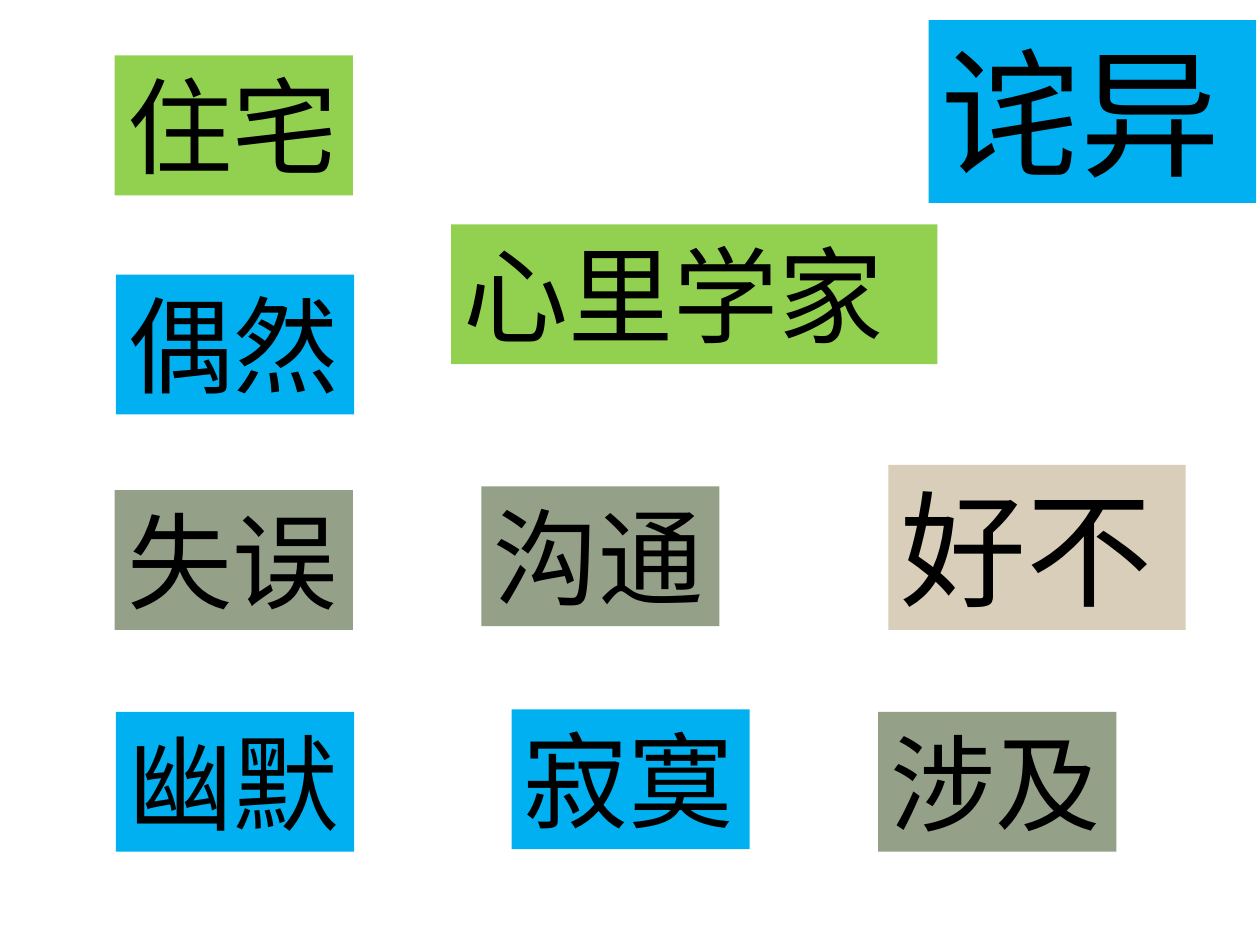
from dataclasses import dataclass
from pptx import Presentation
from pptx.dml.color import RGBColor
from pptx.enum.text import MSO_AUTO_SIZE
from pptx.slide import Slide
from pptx.util import Inches, Pt

BLACK = RGBColor(0x00, 0x00, 0x00)
GREEN = RGBColor(0x92, 0xD0, 0x50)
BLUE = RGBColor(0x00, 0xB0, 0xF0)
SAGE = RGBColor(0x94, 0xA0, 0x88)
SAND = RGBColor(0xD8, 0xCE, 0xBA)


@dataclass
class WordBoard:
    slide: Slide
    font_name: str = "Calibri"
    ink: RGBColor = BLACK

    def add_word(self, word, left, top, color, width=1.89, height=1.11, size=60):
        card = self.slide.shapes.add_textbox(
            Inches(left), Inches(top), Inches(width), Inches(height)
        )
        card.fill.solid()
        card.fill.fore_color.rgb = color
        frame = card.text_frame
        frame.word_wrap = True
        frame.auto_size = MSO_AUTO_SIZE.SHAPE_TO_FIT_TEXT
        run = frame.paragraphs[0].add_run()
        run.text = word
        run.font.name = self.font_name
        run.font.size = Pt(size)
        run.font.color.rgb = self.ink


def main():
    presentation = Presentation()
    presentation.slide_width = Inches(10)
    presentation.slide_height = Inches(7.5)
    board = WordBoard(presentation.slides.add_slide(presentation.slide_layouts[6]))

    board.add_word("住宅", 0.91, 0.44, GREEN)
    board.add_word("失误", 0.91, 3.89, SAGE)
    board.add_word("心里学家", 3.58, 1.78, GREEN, width=3.86)
    board.add_word("诧异", 7.37, 0.16, BLUE, width=2.6, height=1.45, size=80)
    board.add_word("好不", 7.05, 3.69, SAND, width=2.36, height=1.31, size=72)
    board.add_word("寂寞", 4.06, 5.63, BLUE)
    board.add_word("偶然", 0.92, 2.18, BLUE)
    board.add_word("幽默", 0.92, 5.65, BLUE)
    board.add_word("沟通", 3.82, 3.86, SAGE)
    board.add_word("涉及", 6.97, 5.65, SAGE)

    presentation.save("out.pptx")


if __name__ == "__main__":
    main()
